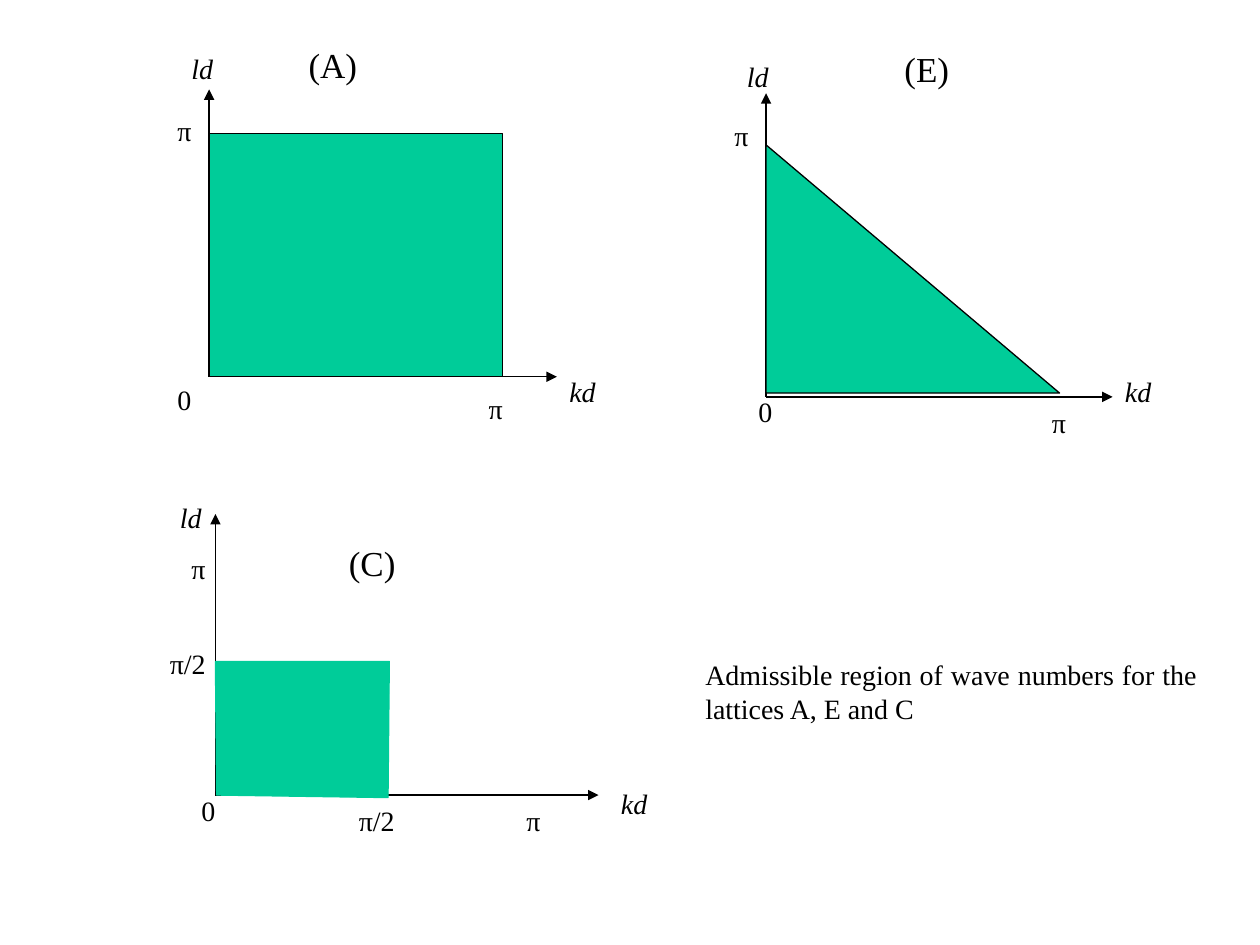
from lxml.etree import SubElement as Sub
from pptx import Presentation
from pptx.dml.color import RGBColor as Rgb
from pptx.enum.shapes import MSO_CONNECTOR as Conn, MSO_SHAPE as Shape
from pptx.enum.text import MSO_AUTO_SIZE as Auto, PP_ALIGN as Align
from pptx.oxml.ns import qn
from pptx.util import Inches, Pt

BLACK = Rgb(0x00, 0x00, 0x00)
GREEN = Rgb(0x00, 0xCC, 0x99)
FONT = "Times New Roman"
COLS, ROWS = 100, 75
WIDE, HIGH = Inches(10), Inches(7.5)

PLOTS = [
    {"zero": (16.6, 29.9), "ends": (44.2, 7.1),
     "kind": Shape.RECTANGLE, "area": (16.6, 10.6, 23.3, 19.3),
     "title": ("(A)", 23.5, 3, 5.9),
     "axes": [("ld", 14.2, 3.6, 3.8), ("kd", 44.2, 29.2, 4.1)],
     "ticks": [("π", 37.8, 30.6, 4.8), ("π", 13.1, 8.5, 4.8),
               ("0", 13.1, 29.9, 4.8)]},
    {"zero": (60.8, 31.5), "ends": (88.3, 7.4),
     "kind": Shape.RIGHT_TRIANGLE, "area": (60.8, 11.5, 23.3, 19.7),
     "title": ("(E)", 70.8, 3.3, 5.6),
     "axes": [("ld", 58.3, 4.2, 3.8), ("kd", 88.3, 29.2, 4.1)],
     "ticks": [("π", 82.5, 31.7, 4.8), ("π", 57.3, 8.9, 4.8),
               ("0", 59.2, 30.8, 4.8)]},
    {"zero": (17.1, 63.1), "ends": (47.5, 40.8),
     "points": [(17.1, 52.5), (30.9, 52.5), (30.8, 63.3),
                (17.2, 63.1), (17.1, 52.7)],
     "title": ("(C)", 26.7, 42.5, 5.7),
     "axes": [("ld", 13.3, 39.2, 3.8), ("kd", 48.3, 61.9, 4.1)],
     "ticks": [("π", 40.8, 63.3, 5.3), ("π", 14.2, 43.3, 5.3),
               ("0", 15, 62.5, 5.3), ("π/2", 27.5, 63.3, 5.3),
               ("π/2", 12.5, 50.8, 5.3)]},
]
NOTE = ("Admissible region of wave numbers for the lattices A, E and C",
        55, 51.7, 41)

deck = Presentation()
deck.slide_width, deck.slide_height = WIDE, HIGH
slide = deck.slides.add_slide(deck.slide_layouts[6])
shapes = slide.shapes


def grid(*vals):
    return [round(v * (HIGH / ROWS if i % 2 else WIDE / COLS))
            for i, v in enumerate(vals)]


def write(text, x, y, w, h=3.7, size=16, slant=False, wrap=True,
          align=Align.LEFT):
    frame = shapes.add_textbox(*grid(x, y, w, h)).text_frame
    frame.word_wrap = wrap
    frame.auto_size = Auto.SHAPE_TO_FIT_TEXT
    par = frame.paragraphs[0]
    par.alignment = align
    run = par.add_run()
    run.text = text
    font = run.font
    font.name, font.size, font.italic = FONT, Pt(size), slant
    font.color.rgb = BLACK


def arrow(start, end):
    link = shapes.add_connector(Conn.STRAIGHT, *grid(*start, *end))
    link.line.color.rgb = BLACK
    link.line.width = Pt(0.75)
    Sub(link.line._get_or_add_ln(), qn("a:tailEnd"), type="triangle")
    Sub(link._element.spPr, qn("a:effectLst"))


def region(plot):
    if "points" in plot:
        first, *rest = [grid(*p) for p in plot["points"]]
        pen = shapes.build_freeform(*first)
        pen.add_line_segments(rest, close=True)
        shape, edge = pen.convert_to_shape(), GREEN
    else:
        shape = shapes.add_shape(plot["kind"], *grid(*plot["area"]))
        edge = BLACK
    shape.shadow.inherit = False
    shape.fill.solid()
    shape.fill.fore_color.rgb = GREEN
    shape.line.color.rgb = edge
    shape.line.width = Pt(0.75)


for plot in PLOTS:
    x, y = plot["zero"]
    right, top = plot["ends"]
    arrow((x, y), (right, y))
    arrow((x, y), (x, top))
    region(plot)
    write(*plot["title"], h=4.3, size=20, wrap=False)
    for label in plot["axes"]:
        write(*label, slant=True, wrap=False)
    for label in plot["ticks"]:
        write(*label)

write(*NOTE, h=6.4, align=Align.JUSTIFY)
deck.save("out.pptx")
